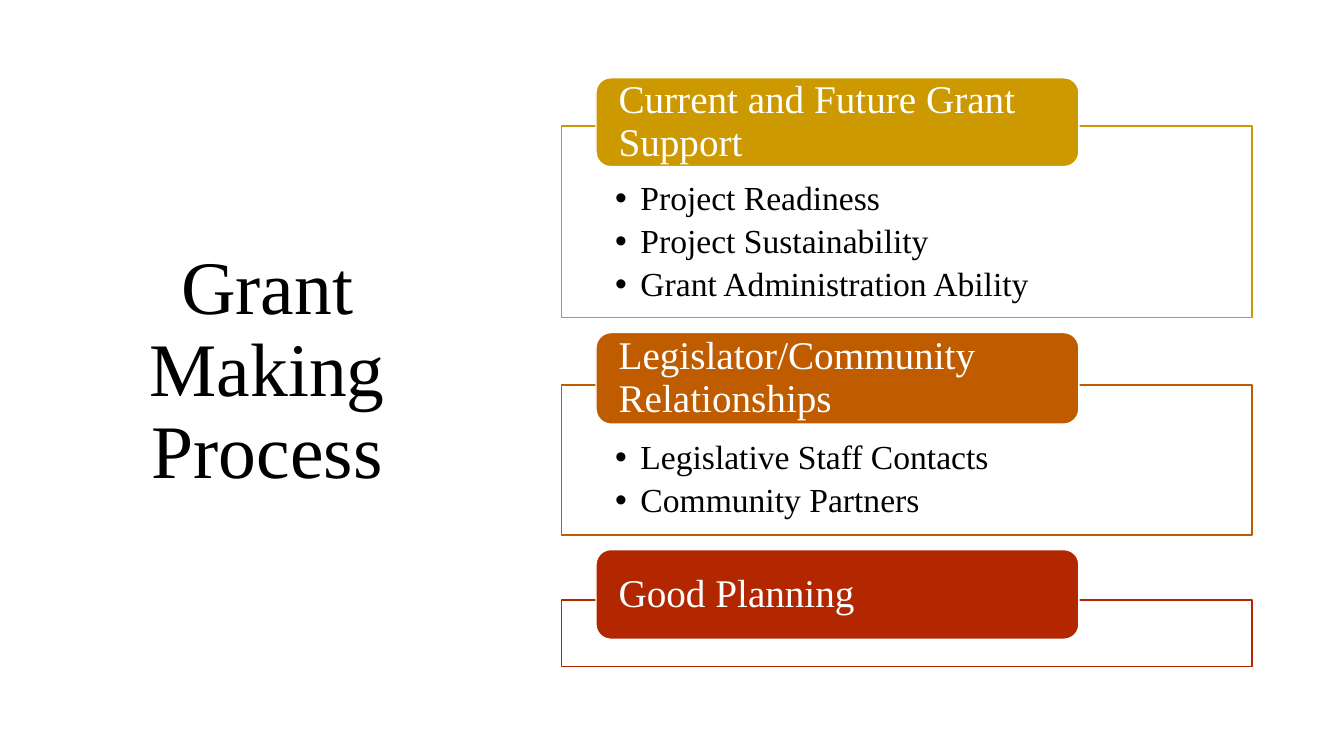
import pptx
import pptx.dml.color
import pptx.enum.shapes
import pptx.enum.text
import pptx.oxml
import pptx.oxml.ns
import pptx.util
from dataclasses import dataclass

Cm, Pt = pptx.util.Cm, pptx.util.Pt
MSO_SHAPE = pptx.enum.shapes.MSO_SHAPE
PP_ALIGN = pptx.enum.text.PP_ALIGN
MSO_ANCHOR = pptx.enum.text.MSO_ANCHOR


@dataclass(frozen=True)
class Theme:
    font: str = "Times New Roman"
    text: str = "000000"
    light: str = "FFFFFF"
    gold: str = "CC9900"
    orange: str = "BF5C00"
    red: str = "B22600"
    title_size: int = 54
    label_size: int = 28
    list_size: int = 24
    panel_opacity: int = 90


THEME = Theme()

# Sizes in centimetres
PANEL_LEFT, PANEL_WIDTH = 14.15, 17.4
LABEL_LEFT, LABEL_WIDTH = 15.02, 12.17
FIRST_LABEL_TOP, SECTION_GAP = 1.96, 0.37
BULLET_INDENT = 0.64

# Label, bullets, colour, label height, panel offset below label top, panel height
SECTIONS = [
    ("Current and Future Grant Support",
     ["Project Readiness", "Project Sustainability", "Grant Administration Ability"],
     THEME.gold, 2.24, 1.22, 4.83),
    ("Legislator/Community Relationships",
     ["Legislative Staff Contacts", "Community Partners"],
     THEME.orange, 2.31, 1.32, 3.78),
    ("Good Planning", [], THEME.red, 2.26, 1.27, 1.68),
]


def rgb(color):
    return pptx.dml.color.RGBColor.from_string(color)


class SlideBuilder:
    def __init__(self, slide, theme):
        self.slide = slide
        self.theme = theme

    def place(self, shape, left, top, width, height):
        shape.left, shape.top = Cm(left), Cm(top)
        shape.width, shape.height = Cm(width), Cm(height)

    def set_text(self, shape, lines, size, color, align, anchor, insets, space_after=0):
        frame = shape.text_frame
        frame.text = "\n".join(lines)
        frame.word_wrap = True
        frame.auto_size = pptx.enum.text.MSO_AUTO_SIZE.NONE
        frame.vertical_anchor = anchor
        (frame.margin_left, frame.margin_top,
         frame.margin_right, frame.margin_bottom) = map(Cm, insets)
        for paragraph in frame.paragraphs:
            paragraph.alignment = align
            paragraph.line_spacing = 0.9
            paragraph.space_before = Pt(0)
            paragraph.space_after = Pt(space_after)
            paragraph.font.name = self.theme.font
            paragraph.font.size = Pt(size)
            paragraph.font.color.rgb = rgb(color)

    def title(self, text, *box):
        title = self.slide.shapes.title
        self.place(title, *box)
        self.set_text(title, [text], self.theme.title_size, self.theme.text,
                      PP_ALIGN.CENTER, MSO_ANCHOR.MIDDLE, (0.25, 0.13, 0.25, 0.13))

    def box(self, kind, fill, line, *box):
        shape = self.slide.shapes.add_shape(kind, *map(Cm, box))
        shape.shadow.inherit = False
        shape.fill.solid()
        shape.fill.fore_color.rgb = rgb(fill)
        shape.line.color.rgb = rgb(line)
        shape.line.width = Pt(1)
        return shape

    def panel(self, color, *box):
        panel = self.box(MSO_SHAPE.RECTANGLE, self.theme.light, color, *box)
        # Slight transparency of the fill
        fill_color = panel.element.spPr.find(".//" + pptx.oxml.ns.qn("a:srgbClr"))
        alpha = pptx.oxml.parse_xml(
            f'<a:alpha {pptx.oxml.ns.nsdecls("a")} val="{self.theme.panel_opacity * 1000}"/>')
        fill_color.append(alpha)
        return panel

    def bullets(self, placeholder, panel, lines, *box):
        self.place(placeholder, *box)
        self.set_text(placeholder, lines, self.theme.list_size, self.theme.text,
                      PP_ALIGN.LEFT, MSO_ANCHOR.TOP, (1.35, 1.4, 1.35, 0.48), 4.8)
        for paragraph in placeholder.text_frame.paragraphs:
            properties = paragraph._p.get_or_add_pPr()
            properties.set("marL", str(int(Cm(BULLET_INDENT))))
            properties.set("indent", str(-int(Cm(BULLET_INDENT))))
        # Stack the list in front of its panel
        panel.element.addnext(placeholder.element)

    def label(self, text, color, *box):
        label = self.box(MSO_SHAPE.ROUNDED_RECTANGLE, color, self.theme.light, *box)
        self.set_text(label, [text], self.theme.label_size, self.theme.light,
                      PP_ALIGN.LEFT, MSO_ANCHOR.MIDDLE, (0.46, 0, 0.46, 0))


def main():
    presentation = pptx.Presentation()
    presentation.slide_width, presentation.slide_height = Cm(33.87), Cm(19.05)
    # Layout with a title and two content placeholders
    slide = presentation.slides.add_slide(presentation.slide_layouts[3])
    builder = SlideBuilder(slide, THEME)

    # Title
    builder.title("Grant Making Process", 1.45, 1.73, 10.57, 15.29)

    # Sections, stacked from top to bottom
    list_placeholders = iter(list(slide.placeholders)[1:])
    label_top = FIRST_LABEL_TOP
    for text, lines, color, label_height, panel_offset, panel_height in SECTIONS:
        panel_top = label_top + panel_offset
        panel_box = (PANEL_LEFT, panel_top, PANEL_WIDTH, panel_height)
        panel = builder.panel(color, *panel_box)
        if lines:
            builder.bullets(next(list_placeholders), panel, lines, *panel_box)
        builder.label(text, color, LABEL_LEFT, label_top, LABEL_WIDTH, label_height)
        label_top = panel_top + panel_height + SECTION_GAP

    presentation.save("out.pptx")


if __name__ == "__main__":
    main()
